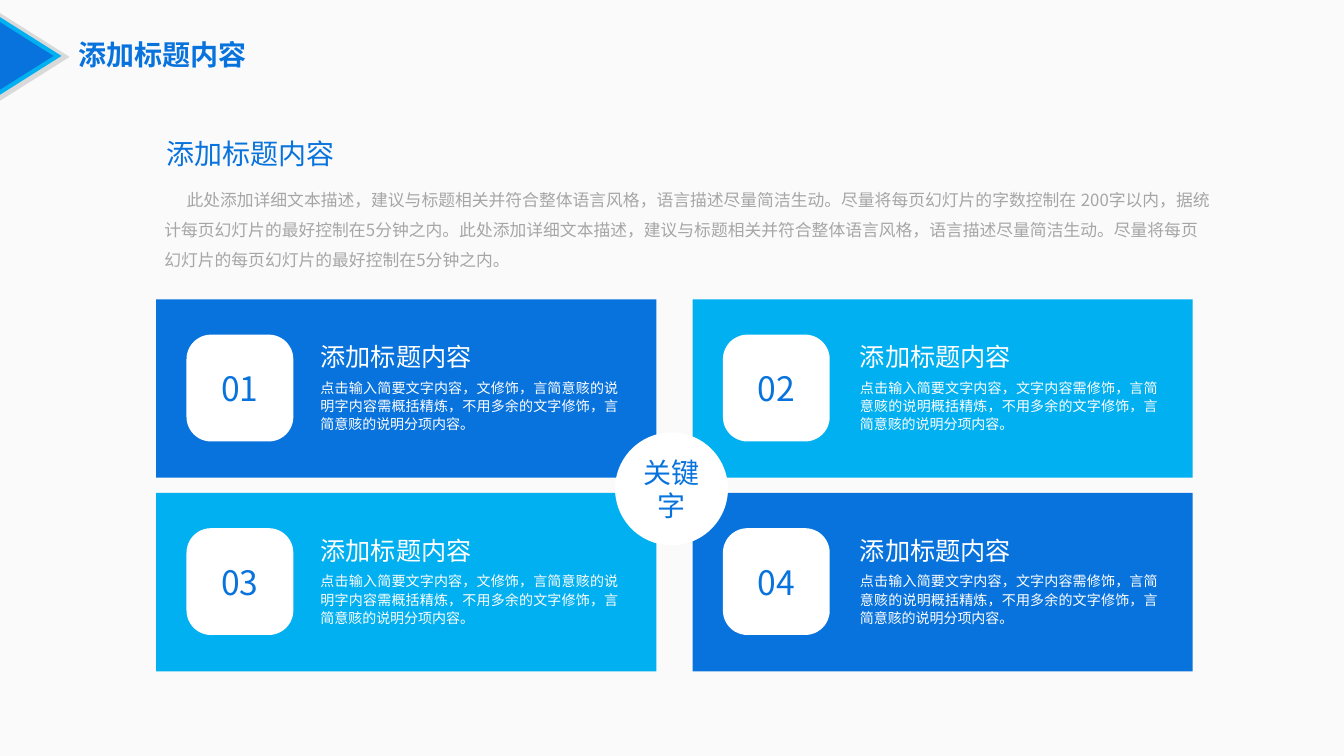
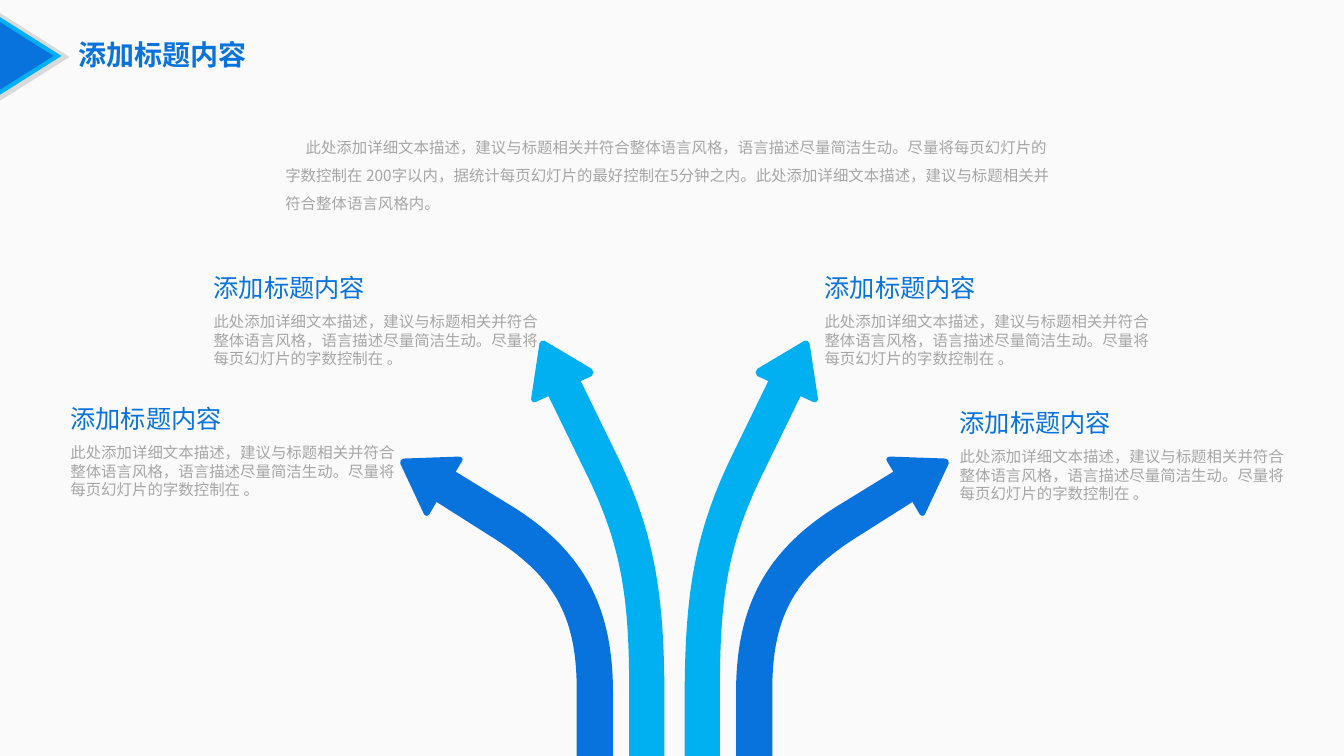
"""Build two slides: four keyword cards and four branching arrows."""
from dataclasses import dataclass

from lxml import etree
from pptx import Presentation
from pptx import slide as slides
from pptx import util as u
from pptx.dml import color as dml, fill as fills
from pptx.enum import shapes, text
from pptx.oxml import ns
from pptx.shapes import autoshape
from pptx.text import text as texts

FONT = "Noto Sans CJK SC"
HEADING = "添加标题内容"
COLORS = {
    "blue": "0973DD",
    "sky": "00B0F0",
    "white": "FFFFFF",
    "gray": "A6A6A6",
    "silver": "D9D9D9",
    "page": "FAFAFA",
}
MIRROR_SUM = 13.38


@dataclass(frozen=True)
class Marker:
    left: float
    top: float
    width: float
    height: float
    color: str


@dataclass(frozen=True)
class Column:
    left: float
    text_left: float
    body: str


@dataclass(frozen=True)
class Arrow:
    color: str
    start: tuple[float, float]
    segments: tuple[tuple[float, ...], ...]


@dataclass(frozen=True)
class Note:
    left: float
    top: float


MARKERS = (
    Marker(-0.09, 0.22, 0.87, 0.69, "silver"),
    Marker(-0.08, 0.25, 0.77, 0.61, "sky"),
    Marker(-0.07, 0.29, 0.67, 0.53, "blue"),
)
COLUMNS = (
    Column(1.55, 3.08, "点击输入简要文字内容，文修饰，言简意赅的说明字内容需概括精炼，"
                       "不用多余的文字修饰，言简意赅的说明分项内容。"),
    Column(6.87, 8.43, "点击输入简要文字内容，文字内容需修饰，言简意赅的说明概括精炼，"
                       "不用多余的文字修饰，言简意赅的说明分项内容。"),
)
ROW_TOPS = (2.97, 4.89)
ARROWS = (
    Arrow("blue", (6.08, 7.5), (
        (6.08, 6.88), (6.08, 6.09, 5.84, 5.5, 5.09, 5.03), (4.52, 4.68),
        (4.58, 4.58), (4.6, 4.55, 4.58, 4.53, 4.55, 4.53), (4, 4.55),
        (3.98, 4.55, 3.96, 4.58, 3.97, 4.6), (4.2, 5.09),
        (4.21, 5.12, 4.24, 5.13, 4.26, 5.1), (4.33, 4.98), (4.85, 5.31),
        (5.48, 5.7, 5.72, 6.09, 5.72, 6.84), (5.72, 7.5),
    )),
    Arrow("sky", (6.24, 7.5), (
        (6.59, 7.5), (6.59, 6.97), (6.59, 5.95, 6.51, 5.33, 6.13, 4.54),
        (5.76, 3.78), (5.87, 3.73), (5.89, 3.71, 5.89, 3.68, 5.87, 3.66),
        (5.4, 3.38), (5.38, 3.37, 5.35, 3.39, 5.35, 3.41), (5.27, 3.94),
        (5.26, 3.97, 5.28, 4, 5.31, 3.99), (5.44, 3.93), (5.83, 4.73),
        (6.16, 5.41, 6.24, 5.93, 6.24, 6.82),
    )),
)
NOTES = (Note(0.6, 3.95), Note(2.02, 2.65), Note(8.08, 2.65), Note(9.42, 3.99))
NOTE_BODY = ("此处添加详细文本描述，建议与标题相关并符合整体语言风格，"
             "语言描述尽量简洁生动。尽量将每页幻灯片的字数控制在 。")
INTRO = ("此处添加详细文本描述，建议与标题相关并符合整体语言风格，语言描述尽量简洁生动。"
         "尽量将每页幻灯片的字数控制在 200字以内，据统计每页幻灯片的最好控制在5分钟之内。"
         "此处添加详细文本描述，建议与标题相关并符合整体语言风格")
CARDS_INTRO = INTRO + ("，语言描述尽量简洁生动。"
                       "尽量将每页幻灯片的每页幻灯片的最好控制在5分钟之内。")
ARROWS_INTRO = INTRO + "内。"


def paint(fill: fills.FillFormat, color: str) -> None:
    fill.solid()
    fill.fore_color.rgb = dml.RGBColor.from_string(COLORS[color])


def write(frame: texts.TextFrame, content: str, *, size: float, color: str,
          bold: bool = False, align: text.PP_ALIGN = text.PP_ALIGN.LEFT,
          anchor: text.MSO_ANCHOR = text.MSO_ANCHOR.TOP, wrap: bool = True,
          spacing: float | u.Length | None = None, indent: float = 0) -> None:
    frame.word_wrap = wrap
    frame.vertical_anchor = anchor
    para = frame.paragraphs[0]
    para.alignment = align
    if spacing is not None:
        para.line_spacing = spacing
    if indent:
        properties = para._p.get_or_add_pPr()
        properties.set("marL", "0")
        properties.set("indent", str(u.Inches(indent)))
    span = para.add_run()
    span.text = content
    span.font.size = u.Pt(size)
    span.font.bold = bold
    span.font.name = FONT
    span.font.color.rgb = dml.RGBColor.from_string(COLORS[color])
    east_asian = etree.SubElement(span._r.get_or_add_rPr(), ns.qn("a:ea"))
    east_asian.set("typeface", FONT)


def add_text(page: slides.Slide, left: float, top: float, width: float,
             height: float, content: str, *, inset: bool = True, **style) -> None:
    box = page.shapes.add_textbox(*map(u.Inches, (left, top, width, height)))
    frame = box.text_frame
    if inset:
        frame.auto_size = text.MSO_AUTO_SIZE.SHAPE_TO_FIT_TEXT
    else:
        frame.margin_left = frame.margin_right = 0
        frame.margin_top = frame.margin_bottom = 0
    write(frame, content, **style)


def add_heading(page: slides.Slide, left: float, top: float, color: str) -> None:
    add_text(page, left, top, 1.72, 0.4, HEADING, size=18, color=color, wrap=False)


def finish(shape: autoshape.Shape, color: str) -> autoshape.Shape:
    shape.shadow.inherit = False
    paint(shape.fill, color)
    shape.line.fill.background()
    return shape


def add_shape(page: slides.Slide, kind: shapes.MSO_SHAPE, left: float, top: float,
              width: float, height: float, color: str) -> autoshape.Shape:
    place = map(u.Inches, (left, top, width, height))
    return finish(page.shapes.add_shape(kind, *place), color)


def add_page(deck) -> slides.Slide:
    page = deck.slides.add_slide(deck.slide_layouts[6])
    paint(page.background.fill, "page")
    for marker in MARKERS:
        triangle = add_shape(page, shapes.MSO_SHAPE.ISOSCELES_TRIANGLE, marker.left,
                             marker.top, marker.width, marker.height, marker.color)
        triangle.rotation = 90
    add_text(page, 0.68, 0.32, 2.36, 0.44, HEADING, size=20, color="blue", bold=True)
    return page


def add_intro(page: slides.Slide, left: float, top: float, width: float,
              content: str, size: float) -> None:
    add_text(page, left, top, width, 1.25, content, inset=False, size=size,
             color="gray", spacing=1.5, indent=0.22 * size / 12)


def add_card(page: slides.Slide, column: Column, top: float, number: int,
             color: str) -> None:
    add_shape(page, shapes.MSO_SHAPE.RECTANGLE, column.left, top, 4.96, 1.77, color)
    badge = add_shape(page, shapes.MSO_SHAPE.ROUNDED_RECTANGLE, column.left + 0.3,
                      top + 0.35, 1.06, 1.06, "white")
    badge.adjustments[0] = 0.23
    write(badge.text_frame, f"{number:02}", size=24, color="blue",
          align=text.PP_ALIGN.CENTER, anchor=text.MSO_ANCHOR.MIDDLE)
    add_text(page, column.text_left, top + 0.73, 3.15, 0.65, column.body, size=10,
             color="white", align=text.PP_ALIGN.JUSTIFY, spacing=u.Pt(13))
    add_heading(page, column.text_left, top + 0.37, "white")


def add_arrow(page: slides.Slide, arrow: Arrow, mirrored: bool) -> None:
    def locate(numbers: tuple[float, ...]) -> list[tuple[int, int]]:
        return [(u.Inches(MIRROR_SUM - x if mirrored else x), u.Inches(y))
                for x, y in zip(numbers[::2], numbers[1::2])]

    routes = [locate(segment) for segment in arrow.segments]
    builder = page.shapes.build_freeform(*locate(arrow.start)[0])
    builder.add_line_segments([route[-1] for route in routes], close=True)
    shape = finish(builder.convert_to_shape(), arrow.color)
    lines = list(shape._element.iter(ns.qn("a:lnTo")))
    for line, route in zip(lines, routes):
        if len(route) == 1:
            continue
        curve = etree.Element(ns.qn("a:cubicBezTo"))
        for x, y in route:
            point = etree.SubElement(curve, ns.qn("a:pt"))
            point.set("x", str(x - shape.left))
            point.set("y", str(y - shape.top))
        line.getparent().replace(line, curve)


def build_cards(deck) -> None:
    page = add_page(deck)
    add_text(page, 1.55, 1.31, 3.31, 0.44, HEADING, size=20, color="blue")
    add_intro(page, 1.63, 1.78, 10.39, CARDS_INTRO, 12)
    for row, top in enumerate(ROW_TOPS):
        for place, column in enumerate(COLUMNS):
            color = ("blue", "sky")[(row + place) % 2]
            add_card(page, column, top, row * len(COLUMNS) + place + 1, color)
    keyword = add_shape(page, shapes.MSO_SHAPE.OVAL, 6.1, 4.29, 1.12, 1.12, "white")
    write(keyword.text_frame, "关键字", size=20, color="blue",
          align=text.PP_ALIGN.CENTER, anchor=text.MSO_ANCHOR.MIDDLE)


def build_arrows(deck) -> None:
    page = add_page(deck)
    for mirrored in (False, True):
        for arrow in ARROWS:
            add_arrow(page, arrow, mirrored)
    for note in NOTES:
        add_heading(page, note.left, note.top, "blue")
        add_text(page, note.left, note.top + 0.4, 3.5, 0.66, NOTE_BODY, size=11,
                 color="gray")
    add_intro(page, 2.83, 1.28, 7.69, ARROWS_INTRO, 11)


def main() -> None:
    deck = Presentation()
    deck.slide_width, deck.slide_height = u.Inches(13.33), u.Inches(7.5)
    build_cards(deck)
    build_arrows(deck)
    deck.save("out.pptx")


if __name__ == "__main__":
    main()
